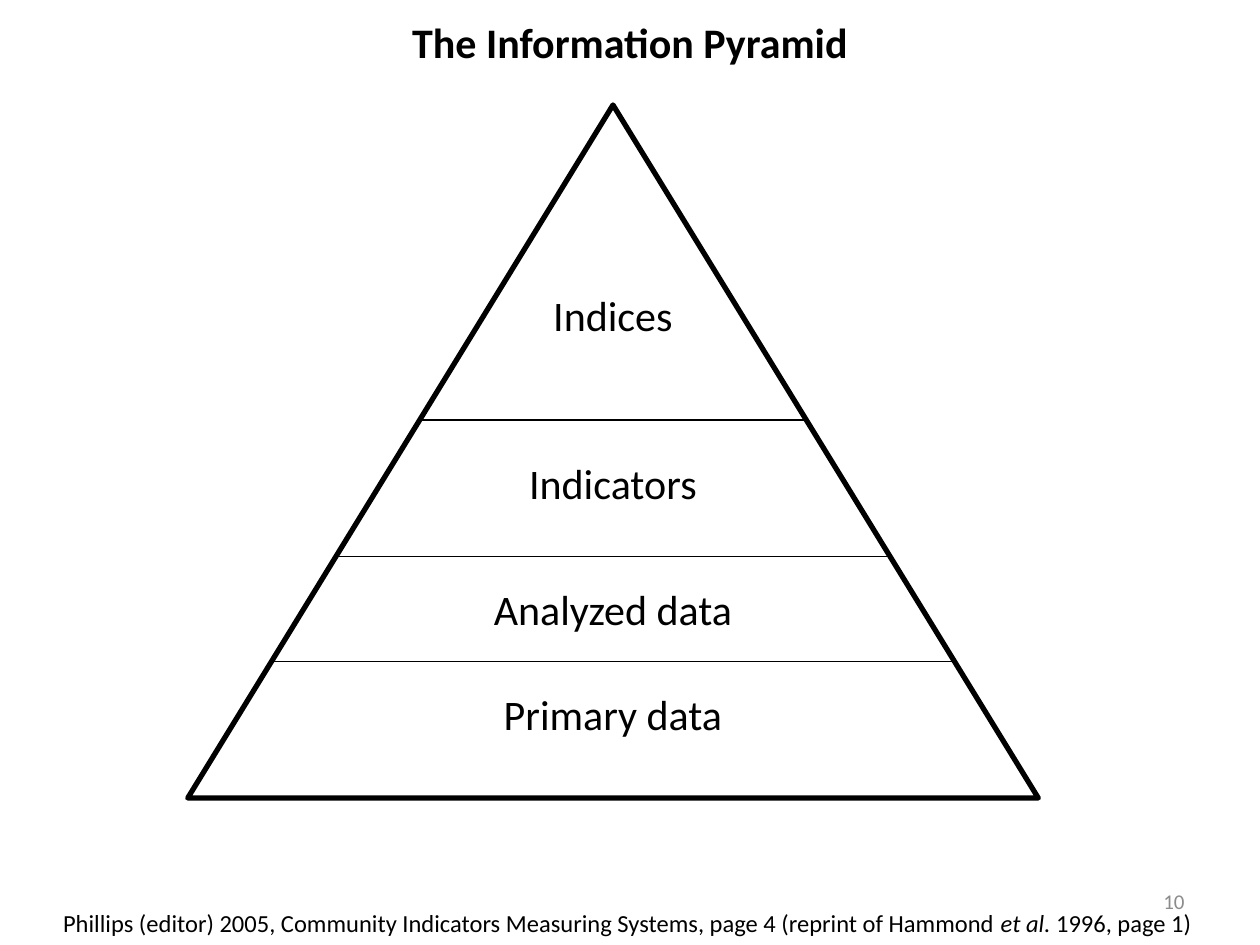
from dataclasses import dataclass

from lxml import etree
from pptx import Presentation
from pptx.dml.color import RGBColor
from pptx.enum import shapes, text
from pptx.oxml import ns
from pptx.util import Pt

BLACK = RGBColor(0x00, 0x00, 0x00)
WHITE = RGBColor(0xFF, 0xFF, 0xFF)
GREY = RGBColor(0x8C, 0x8C, 0x8C)
FONT = "Calibri"
CENTER, RIGHT = text.PP_ALIGN.CENTER, text.PP_ALIGN.RIGHT
TOP, MIDDLE = text.MSO_ANCHOR.TOP, text.MSO_ANCHOR.MIDDLE

SLIDE_WIDTH, SLIDE_HEIGHT = 720, 540


@dataclass(frozen=True)
class Box:
    left: float
    top: float
    width: float
    height: float

    def lengths(self) -> tuple:
        return tuple(Pt(v) for v in (self.left, self.top, self.width, self.height))


@dataclass(frozen=True)
class Run:
    words: str
    italic: bool = False


@dataclass(frozen=True)
class Level:
    label: str
    label_top: float
    base: float


PYRAMID = Box(107.28, 60, 486, 396)
LABEL_WIDTH, LABEL_HEIGHT = 402, 36
LEVELS = [
    Level("Indices", 162, 240),
    Level("Indicators", 258, 318),
    Level("Analyzed data", 330, 378),
    Level("Primary data", 390, PYRAMID.top + PYRAMID.height),
]
CITATION = [
    Run("Phillips (editor) 2005, Community Indicators Measuring Systems, "
        "page 4 (reprint of Hammond "),
    Run("et al. ", italic=True),
    Run("1996, page 1) "),
]


def write_text(shape, runs: list[Run], size: float, color: RGBColor = BLACK,
               bold: bool = False, align=CENTER, anchor=TOP) -> None:
    frame = shape.text_frame
    frame_format = {"word_wrap": True, "vertical_anchor": anchor,
                    "auto_size": text.MSO_AUTO_SIZE.NONE}
    for name, value in frame_format.items():
        setattr(frame, name, value)
    paragraph = frame.paragraphs[0]
    paragraph.alignment = align
    for part in runs:
        run = paragraph.add_run()
        run.text = part.words
        font_format = {"name": FONT, "size": Pt(size), "bold": bold,
                       "italic": part.italic}
        for name, value in font_format.items():
            setattr(run.font, name, value)
        run.font.color.rgb = color


def add_text(slide, box: Box, runs: list[Run], size: float, **style) -> None:
    write_text(slide.shapes.add_textbox(*box.lengths()), runs, size, **style)


def add_title(slide, box: Box, words: str) -> None:
    title = slide.shapes.title
    for name, value in zip(("left", "top", "width", "height"), box.lengths()):
        setattr(title, name, value)
    write_text(title, [Run(words)], 24, bold=True)


def add_pyramid(slide) -> None:
    triangle = slide.shapes.add_shape(
        shapes.MSO_SHAPE.ISOSCELES_TRIANGLE, *PYRAMID.lengths())
    triangle.shadow.inherit = False
    triangle.fill.solid()
    triangle.fill.fore_color.rgb = WHITE
    triangle.line.color.rgb = BLACK
    triangle.line.width = Pt(3)


def add_divider(slide, y: float) -> None:
    """Draw a level line from one sloping side of the pyramid to the other."""
    center = PYRAMID.left + PYRAMID.width / 2
    half = PYRAMID.width / 2 * (y - PYRAMID.top) / PYRAMID.height
    line = slide.shapes.add_connector(
        shapes.MSO_CONNECTOR.STRAIGHT,
        Pt(center - half), Pt(y), Pt(center + half), Pt(y))
    line.line.color.rgb = BLACK
    line.line.width = Pt(0.75)
    etree.SubElement(line._element.spPr, ns.qn("a:effectLst"))


def main() -> None:
    presentation = Presentation()
    presentation.slide_width = Pt(SLIDE_WIDTH)
    presentation.slide_height = Pt(SLIDE_HEIGHT)
    slide = presentation.slides.add_slide(presentation.slide_layouts[5])

    add_title(slide, Box(0, 6, SLIDE_WIDTH, 36), "The Information Pyramid")
    add_pyramid(slide)
    for level in LEVELS[:-1]:
        add_divider(slide, level.base)
    label_left = PYRAMID.left + (PYRAMID.width - LABEL_WIDTH) / 2
    for level in LEVELS:
        box = Box(label_left, level.label_top, LABEL_WIDTH, LABEL_HEIGHT)
        add_text(slide, box, [Run(level.label)], 24)
    add_text(slide, Box(0, 515.5, SLIDE_WIDTH, 24.5), CITATION, 14)
    add_text(slide, Box(516, 500.5, 168, 28.75), [Run("10")], 12,
             color=GREY, align=RIGHT, anchor=MIDDLE)

    presentation.save("out.pptx")


if __name__ == "__main__":
    main()
